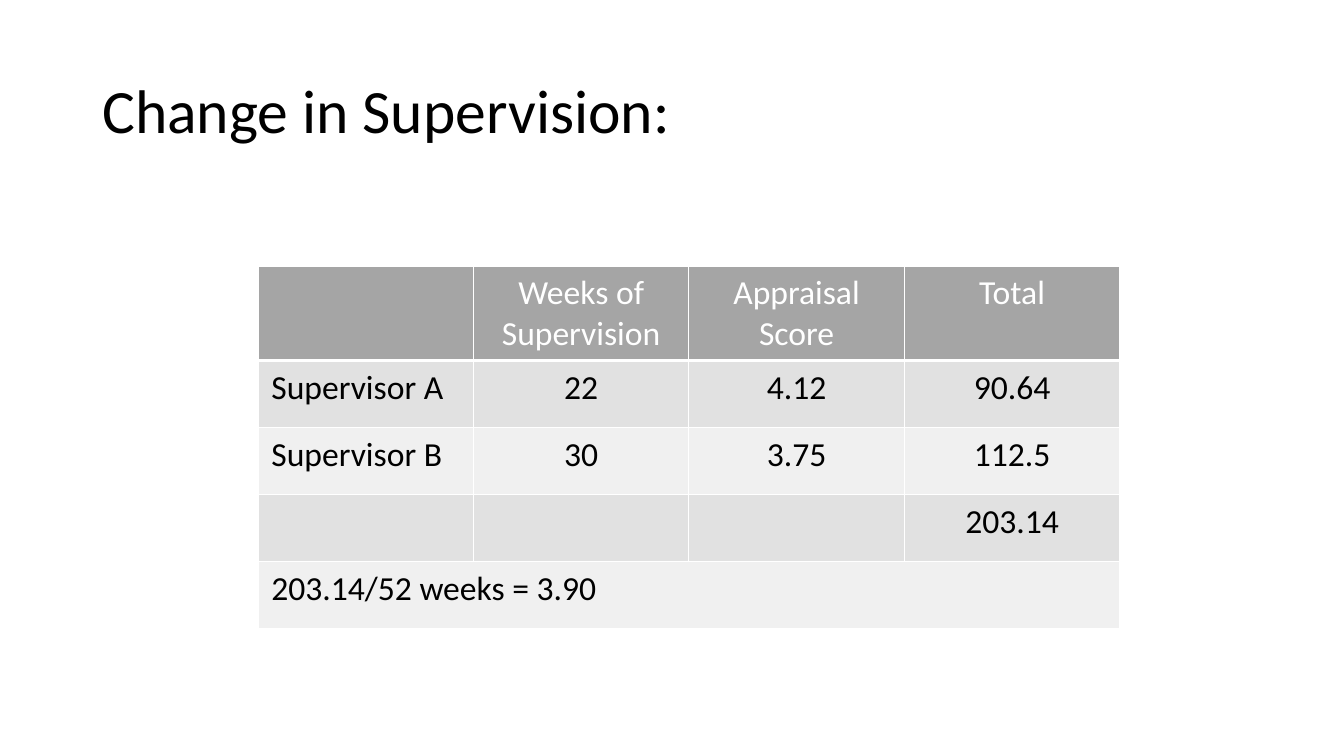
from dataclasses import dataclass

from lxml.etree import SubElement
from pptx import Presentation
from pptx.dml.color import RGBColor
from pptx.enum.text import MSO_ANCHOR, PP_ALIGN
from pptx.oxml.ns import qn
from pptx.slide import Slide
from pptx.table import _Cell as Cell
from pptx.text.text import _Paragraph as Paragraph
from pptx.util import Cm, Pt

BLACK = RGBColor(0x00, 0x00, 0x00)
WHITE = RGBColor(0xFF, 0xFF, 0xFF)
HEADER_GREY = RGBColor(0xA5, 0xA5, 0xA5)
MID_GREY = RGBColor(0xE1, 0xE1, 0xE1)
LIGHT_GREY = RGBColor(0xF0, 0xF0, 0xF0)
FONT = "Calibri"


@dataclass(frozen=True)
class Row:
    texts: tuple[str, ...]
    fill: RGBColor
    color: RGBColor = BLACK
    height: float = 1.69
    bottom_pt: int = 1


ROWS = (
    Row(("", "Weeks of Supervision", "Appraisal Score", "Total"),
        HEADER_GREY, WHITE, 2.37, 3),
    Row(("Supervisor A", "22", "4.12", "90.64"), MID_GREY),
    Row(("Supervisor B", "30", "3.75", "112.5"), LIGHT_GREY),
    Row(("", "", "", "203.14"), MID_GREY),
    Row(("203.14/52 weeks = 3.90",), LIGHT_GREY),
)
COLUMNS = 4
COLUMN_WIDTH = 5.43


def format_runs(p: Paragraph, size: int, color: RGBColor) -> None:
    for r in p.runs:
        r.font.name = FONT
        r.font.size = Pt(size)
        r.font.bold = False
        r.font.color.rgb = color


def add_title(s: Slide, text: str) -> None:
    tf = s.shapes.add_textbox(Cm(2.33), Cm(1.01), Cm(29.21), Cm(3.68)).text_frame
    tf.word_wrap = True
    tf.vertical_anchor = MSO_ANCHOR.MIDDLE
    tf.text = text
    p = tf.paragraphs[0]
    p.line_spacing = 0.9
    format_runs(p, 44, BLACK)


def set_borders(cell: Cell, bottom_pt: int) -> None:
    tc_pr = cell._tc.get_or_add_tcPr()
    for side, width in (("L", 1), ("R", 1), ("T", 1), ("B", bottom_pt)):
        ln = SubElement(tc_pr, qn(f"a:ln{side}"), w=str(Pt(width)))
        fill = SubElement(ln, qn("a:solidFill"))
        SubElement(fill, qn("a:srgbClr"), val=str(WHITE))


def fill_cell(cell: Cell, text: str, row: Row, centred: bool) -> None:
    set_borders(cell, row.bottom_pt)
    cell.fill.solid()
    cell.fill.fore_color.rgb = row.fill
    cell.margin_left = cell.margin_right = Cm(0.34)
    cell.margin_top = cell.margin_bottom = Cm(0.17)
    cell.text = text
    p = cell.text_frame.paragraphs[0]
    p.alignment = PP_ALIGN.CENTER if centred else PP_ALIGN.LEFT
    format_runs(p, 24, row.color)


def add_score_table(s: Slide) -> None:
    height = sum(row.height for row in ROWS)
    table = s.shapes.add_table(len(ROWS), COLUMNS, Cm(6.5), Cm(6.71),
                               Cm(COLUMN_WIDTH * COLUMNS), Cm(height)).table
    for column in table.columns:
        column.width = Cm(COLUMN_WIDTH)
    for i, row in enumerate(ROWS):
        table.rows[i].height = Cm(row.height)
        if len(row.texts) == 1:
            table.cell(i, 0).merge(table.cell(i, COLUMNS - 1))
        for j, text in enumerate(row.texts):
            fill_cell(table.cell(i, j), text, row, j > 0)


def main() -> None:
    prs = Presentation()
    prs.slide_width, prs.slide_height = Cm(33.87), Cm(19.05)
    s = prs.slides.add_slide(prs.slide_layouts[6])
    add_title(s, "Change in Supervision:")
    add_score_table(s)
    prs.save("out.pptx")


if __name__ == "__main__":
    main()
